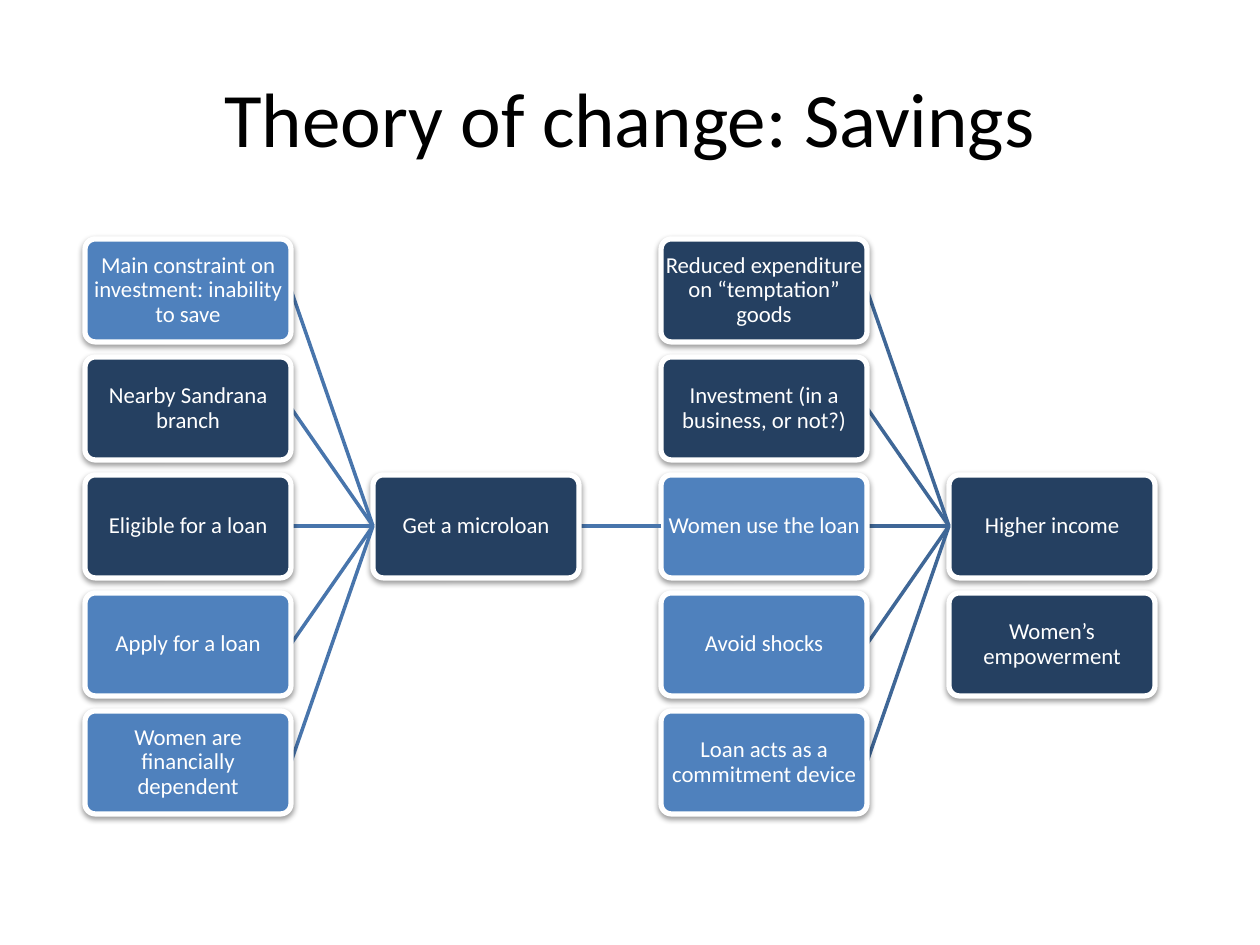
"""Build a slide that shows a theory of change as four linked columns of cards."""
from dataclasses import dataclass

from lxml.etree import SubElement
from pptx import Presentation
from pptx.dml.color import RGBColor
from pptx.enum.shapes import MSO_CONNECTOR, MSO_SHAPE
from pptx.enum.text import MSO_ANCHOR, PP_ALIGN
from pptx.oxml.ns import qn
from pptx.shapes.base import BaseShape
from pptx.slide import Slide
from pptx.text.text import TextFrame
from pptx.util import Emu, Pt


@dataclass(frozen=True)
class Theme:
    font: str = "Calibri"
    black: str = "000000"
    white: str = "FFFFFF"
    navy: str = "254061"
    blue: str = "4F81BD"
    link: str = "4875AC"
    last: str = "3F6797"
    title: int = 44
    body: int = 13
    edge: int = 3
    line: int = 2


@dataclass(frozen=True)
class Card:
    text: str
    fill: str
    col: int
    row: int

    @property
    def left(self) -> int:
        return 85 + 288 * self.col

    @property
    def top(self) -> int:
        return 239 + 118 * self.row


THEME = Theme()
WIDE, HIGH = 206, 103
HUB = 2
CARDS = [
    Card("Main constraint on investment: inability to save", THEME.blue, 0, 0),
    Card("Nearby Sandrana branch", THEME.navy, 0, 1),
    Card("Eligible for a loan", THEME.navy, 0, 2),
    Card("Apply for a loan", THEME.blue, 0, 3),
    Card("Women are financially dependent", THEME.blue, 0, 4),
    Card("Get a microloan", THEME.navy, 1, 2),
    Card("Reduced expenditure on “temptation” goods", THEME.navy, 2, 0),
    Card("Investment (in a business, or not?)", THEME.navy, 2, 1),
    Card("Women use the loan", THEME.blue, 2, 2),
    Card("Avoid shocks", THEME.blue, 2, 3),
    Card("Loan acts as a commitment device", THEME.blue, 2, 4),
    Card("Higher income", THEME.navy, 3, 2),
    Card("Women’s empowerment", THEME.navy, 3, 3),
]


def px(count: int) -> Emu:
    return Emu(round(count * 914400 / 126))


def write(frame: TextFrame, text: str, size: int, color: str) -> None:
    frame.text = text
    frame.word_wrap = True
    frame.vertical_anchor = MSO_ANCHOR.MIDDLE
    para = frame.paragraphs[0]
    para.alignment = PP_ALIGN.CENTER
    font = para.runs[0].font
    font.name, font.size = THEME.font, Pt(size)
    font.color.rgb = RGBColor.from_string(color)


def shade(shape: BaseShape) -> None:
    shape.shadow.inherit = False
    effects = shape._element.spPr.find(qn("a:effectLst"))
    outer = SubElement(effects, qn("a:outerShdw"), blurRad="40000",
                       dist="20000", dir="5400000", rotWithShape="0")
    tint = SubElement(outer, qn("a:srgbClr"), val=THEME.black)
    SubElement(tint, qn("a:alpha"), val="38000")


def draw_card(slide: Slide, card: Card) -> None:
    shape = slide.shapes.add_shape(MSO_SHAPE.ROUNDED_RECTANGLE, px(card.left),
                                   px(card.top), px(WIDE), px(HIGH))
    shape.adjustments[0] = 0.1
    shape.fill.solid()
    shape.fill.fore_color.rgb = RGBColor.from_string(card.fill)
    shape.line.color.rgb = RGBColor.from_string(THEME.white)
    shape.line.width = Pt(THEME.edge)
    shade(shape)
    frame = shape.text_frame
    write(frame, card.text, THEME.body, THEME.white)
    frame.margin_left = frame.margin_right = px(1)
    frame.margin_top = frame.margin_bottom = px(1)
    frame.paragraphs[0].line_spacing = 0.9


def draw_link(slide: Slide, start: Card, end: Card) -> None:
    half = HIGH // 2
    link = slide.shapes.add_connector(
        MSO_CONNECTOR.STRAIGHT, px(start.left + WIDE), px(start.top + half),
        px(end.left), px(end.top + half))
    color = THEME.last if end.col == 3 else THEME.link
    link.line.color.rgb = RGBColor.from_string(color)
    link.line.width = Pt(THEME.line)
    SubElement(link._element.spPr, qn("a:effectLst"))


def main() -> None:
    deck = Presentation()
    deck.slide_width, deck.slide_height = px(1260), px(945)
    slide = deck.slides.add_slide(deck.slide_layouts[6])
    title = slide.shapes.add_textbox(px(63), px(38), px(1134), px(158))
    write(title.text_frame, "Theory of change: Savings", THEME.title, THEME.black)
    hubs = {card.col: card for card in CARDS if card.row == HUB}
    for col in sorted(hubs, reverse=True):
        group = [card for card in CARDS if card.col == col]
        if col + 1 in hubs:
            for card in group:
                draw_link(slide, card, hubs[col + 1])
        for card in group:
            draw_card(slide, card)
    deck.save("out.pptx")


if __name__ == "__main__":
    main()
